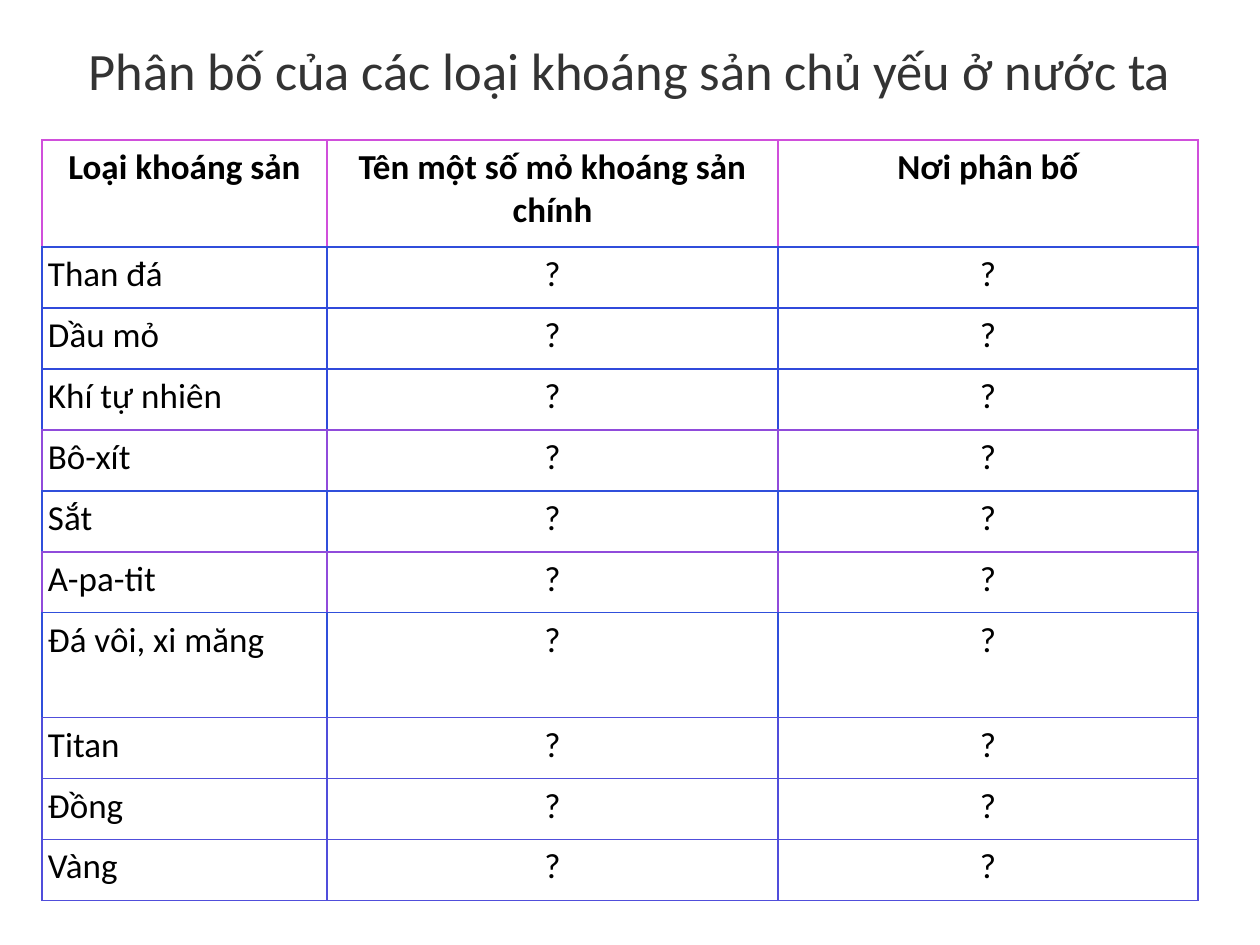
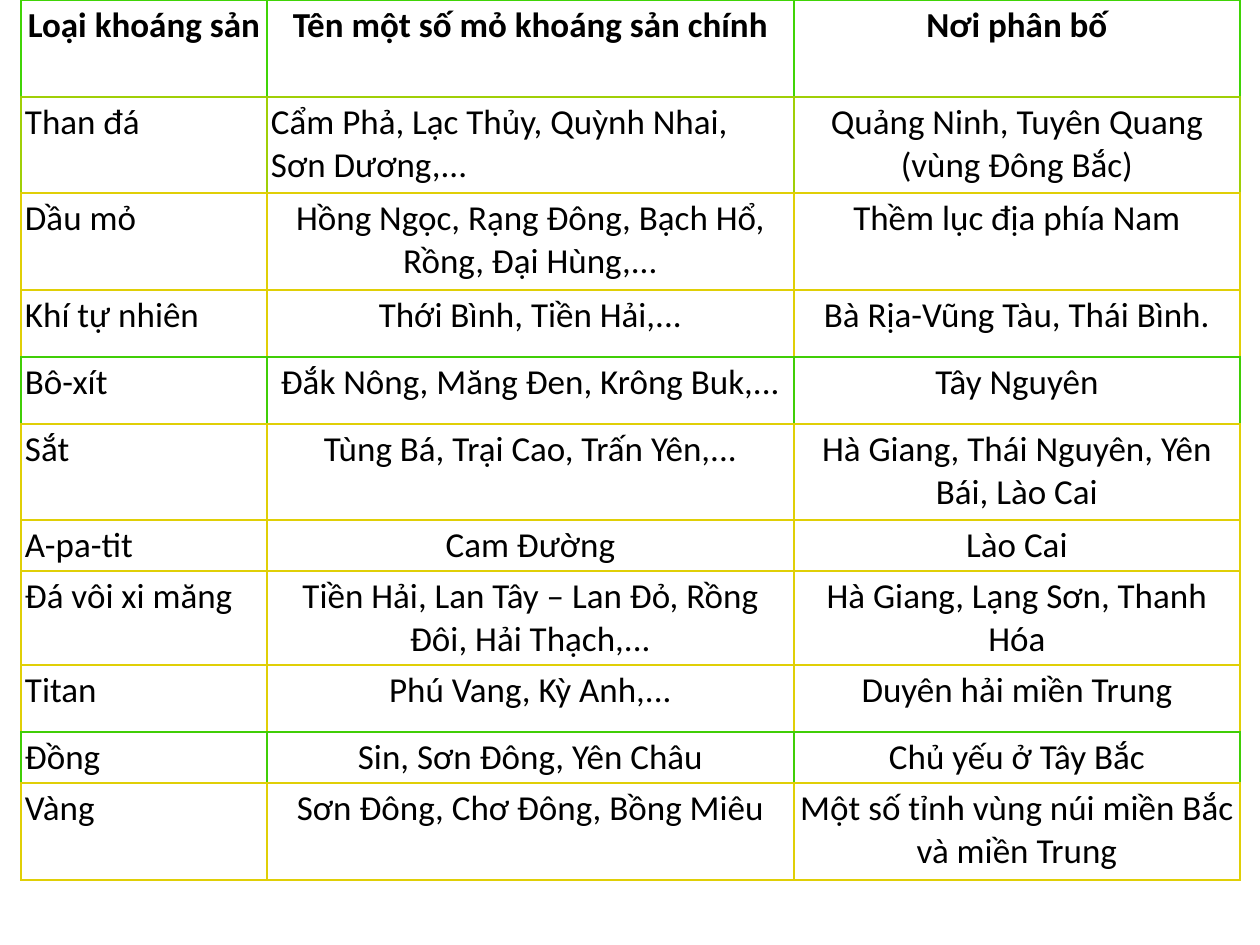
import pptx
import pptx.util
import pptx.dml.color
import pptx.enum.text
import pptx.oxml
import pptx.oxml.ns
from dataclasses import dataclass

PX_PER_INCH = 126
LEFT = pptx.enum.text.PP_ALIGN.LEFT
CENTER = pptx.enum.text.PP_ALIGN.CENTER


@dataclass(frozen=True)
class Theme:
    font: str = "Calibri"
    title_size: int = 30
    table_size: int = 20
    border_width: int = 1
    title: str = "333333"
    text: str = "000000"
    paper: str = "FFFFFF"
    pink: str = "D04FDB"
    blue: str = "304EDB"
    deep_blue: str = "304ADB"
    bright_blue: str = "304FDB"
    violet: str = "904BDB"
    indigo: str = "504EDB"
    green: str = "40D406"
    leaf: str = "40CE06"
    lime: str = "A0CF06"
    yellow: str = "E0CF06"


THEME = Theme()
HEADINGS = ("Loại khoáng sản", "Tên một số mỏ khoáng sản chính", "Nơi phân bố")
MINERALS = ("Than đá", "Dầu mỏ", "Khí tự nhiên", "Bô-xít", "Sắt", "A-pa-tit",
            "Đá vôi, xi măng", "Titan", "Đồng", "Vàng")
DEPOSITS = (
    ("Than đá", "Cẩm Phả, Lạc Thủy, Quỳnh Nhai, Sơn Dương,...",
     "Quảng Ninh, Tuyên Quang (vùng Đông Bắc)"),
    ("Dầu mỏ", "Hồng Ngọc, Rạng Đông, Bạch Hổ, Rồng, Đại Hùng,...",
     "Thềm lục địa phía Nam"),
    ("Khí tự nhiên", "Thới Bình, Tiền Hải,...", "Bà Rịa-Vũng Tàu, Thái Bình."),
    ("Bô-xít", "Đắk Nông, Măng Đen, Krông Buk,...", "Tây Nguyên"),
    ("Sắt", "Tùng Bá, Trại Cao, Trấn Yên,...",
     "Hà Giang, Thái Nguyên, Yên Bái, Lào Cai"),
    ("A-pa-tit", "Cam Đường", "Lào Cai"),
    ("Đá vôi xi măng", "Tiền Hải, Lan Tây – Lan Đỏ, Rồng Đôi, Hải Thạch,...",
     "Hà Giang, Lạng Sơn, Thanh Hóa"),
    ("Titan", "Phú Vang, Kỳ Anh,...", "Duyên hải miền Trung"),
    ("Đồng", "Sin, Sơn Đông, Yên Châu", "Chủ yếu ở Tây Bắc"),
    ("Vàng", "Sơn Đông, Chơ Đông, Bồng Miêu",
     "Một số tỉnh vùng núi miền Bắc và miền Trung"),
)


def px(length):
    return pptx.util.Emu(round(length * 914400 / PX_PER_INCH))


def apply(target, values):
    for name, value in values.items():
        setattr(target, name, value)


def write(para, text, size, color, align, bold=False):
    para.alignment = align
    span = para.add_run()
    span.text = text
    apply(span.font, {"name": THEME.font, "size": pptx.util.Pt(size), "bold": bold})
    span.font.color.rgb = pptx.dml.color.RGBColor.from_string(color)


def add_title(page, box, text):
    frame = page.shapes.add_textbox(*map(px, box)).text_frame
    apply(frame, {"word_wrap": True,
                  "vertical_anchor": pptx.enum.text.MSO_ANCHOR.MIDDLE})
    write(frame.paragraphs[0], text, THEME.title_size, THEME.title, CENTER)


def set_borders(cell, color, color_below):
    # Border lines come before the fill in the cell properties
    properties = cell._tc.get_or_add_tcPr()
    sides = {"lnL": color, "lnR": color, "lnT": color, "lnB": color_below}
    width = pptx.util.Pt(THEME.border_width)
    for position, (side, side_color) in enumerate(sides.items()):
        properties.insert(position, pptx.oxml.parse_xml(
            f'<a:{side} {pptx.oxml.ns.nsdecls("a")} w="{width}"><a:solidFill>'
            f'<a:srgbClr val="{side_color}"/></a:solidFill></a:{side}>'))


def add_mineral_table(page, origin, widths, heights, rows, colors, inset,
                      fill=None, left_cells=()):
    """Each row has one border colour; its lower edge takes that of the next row."""
    left, top = origin
    box = (left, top, sum(widths), sum(heights))
    table = page.shapes.add_table(len(rows), len(widths), *map(px, box)).table
    apply(table, {"first_row": False, "horz_banding": False})
    for column, width in zip(table.columns, widths):
        column.width = px(width)
    margins = {f"margin_{side}": px(inset)
               for side in ("left", "top", "right", "bottom")}

    for r, (texts, height) in enumerate(zip(rows, heights)):
        table.rows[r].height = px(height)
        color_below = colors[min(r + 1, len(rows) - 1)]
        for c, text in enumerate(texts):
            cell = table.cell(r, c)
            apply(cell, margins)
            if fill:
                cell.fill.solid()
                cell.fill.fore_color.rgb = pptx.dml.color.RGBColor.from_string(fill)
            else:
                cell.fill.background()
            set_borders(cell, colors[r], color_below)
            is_left = (r > 0 and c == 0) or (r, c) in left_cells
            write(cell.text_frame.paragraphs[0], text, THEME.table_size, THEME.text,
                  LEFT if is_left else CENTER, bold=r == 0)


def build_question_page(page):
    add_title(page, (0, 0, 1260, 140),
              "Phân bố của các loại khoáng sản chủ yếu ở nước ta")
    add_mineral_table(
        page, (42, 140), widths=(285, 451, 420),
        heights=[107] + [61] * 6 + [105] + [61] * 3,
        rows=[HEADINGS] + [(mineral, "?", "?") for mineral in MINERALS],
        colors=[THEME.pink, THEME.blue, THEME.deep_blue, THEME.deep_blue,
                THEME.violet, THEME.bright_blue, THEME.violet, THEME.bright_blue]
        + [THEME.indigo] * 3,
        inset=6)


def build_answer_page(page):
    colors = [THEME.green, THEME.lime] + [THEME.yellow] * 9
    colors[4] = colors[9] = THEME.leaf
    add_mineral_table(
        page, (21, 0), widths=(246, 527, 446),
        heights=(97, 96, 97, 67, 67, 96, 51, 94, 67, 51, 97),
        rows=(HEADINGS,) + DEPOSITS, colors=colors, inset=4,
        fill=THEME.paper, left_cells={(1, 1)})


def main():
    deck = pptx.Presentation()
    apply(deck, {"slide_width": px(1260), "slide_height": px(945)})
    for build in (build_question_page, build_answer_page):
        build(deck.slides.add_slide(deck.slide_layouts[6]))
    deck.save("out.pptx")


if __name__ == "__main__":
    main()
